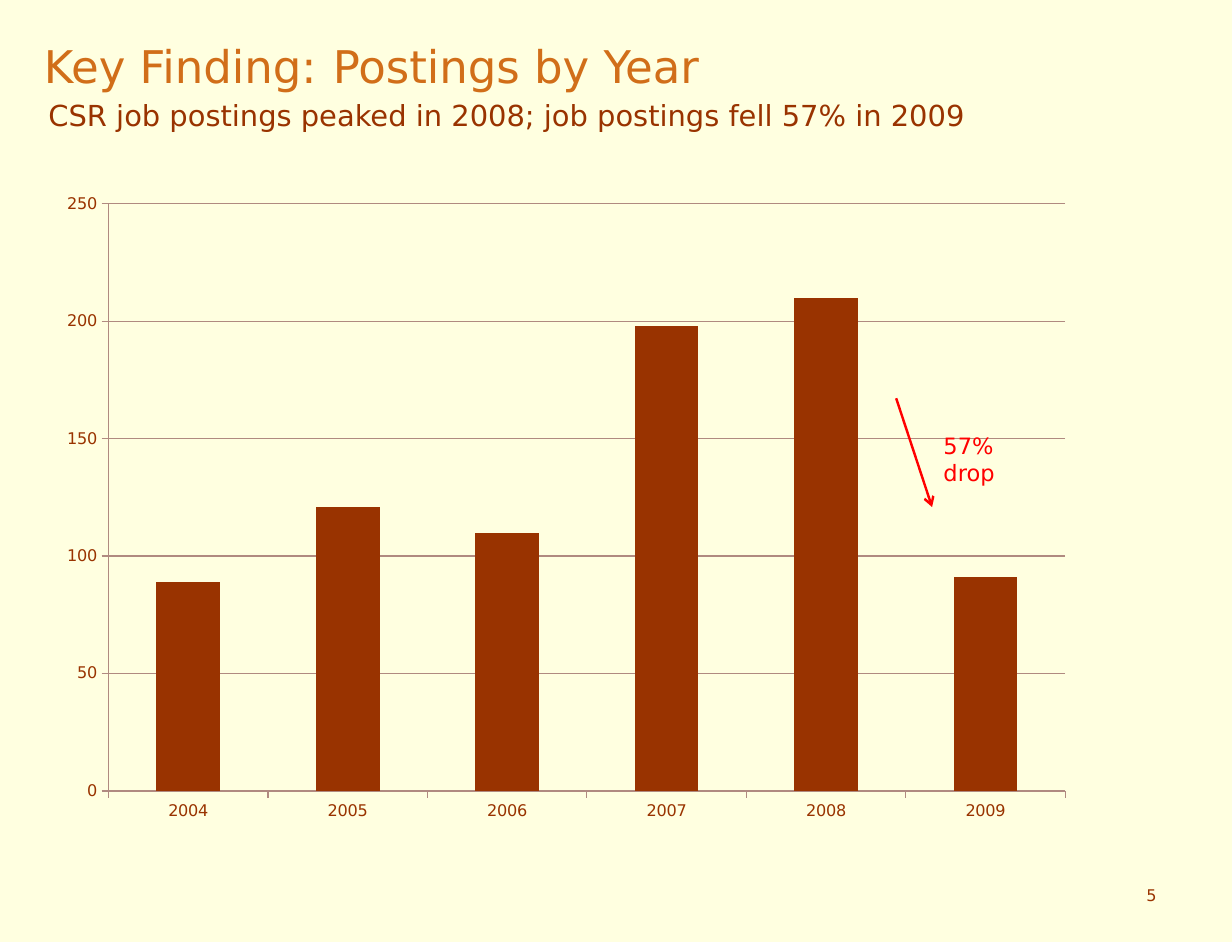
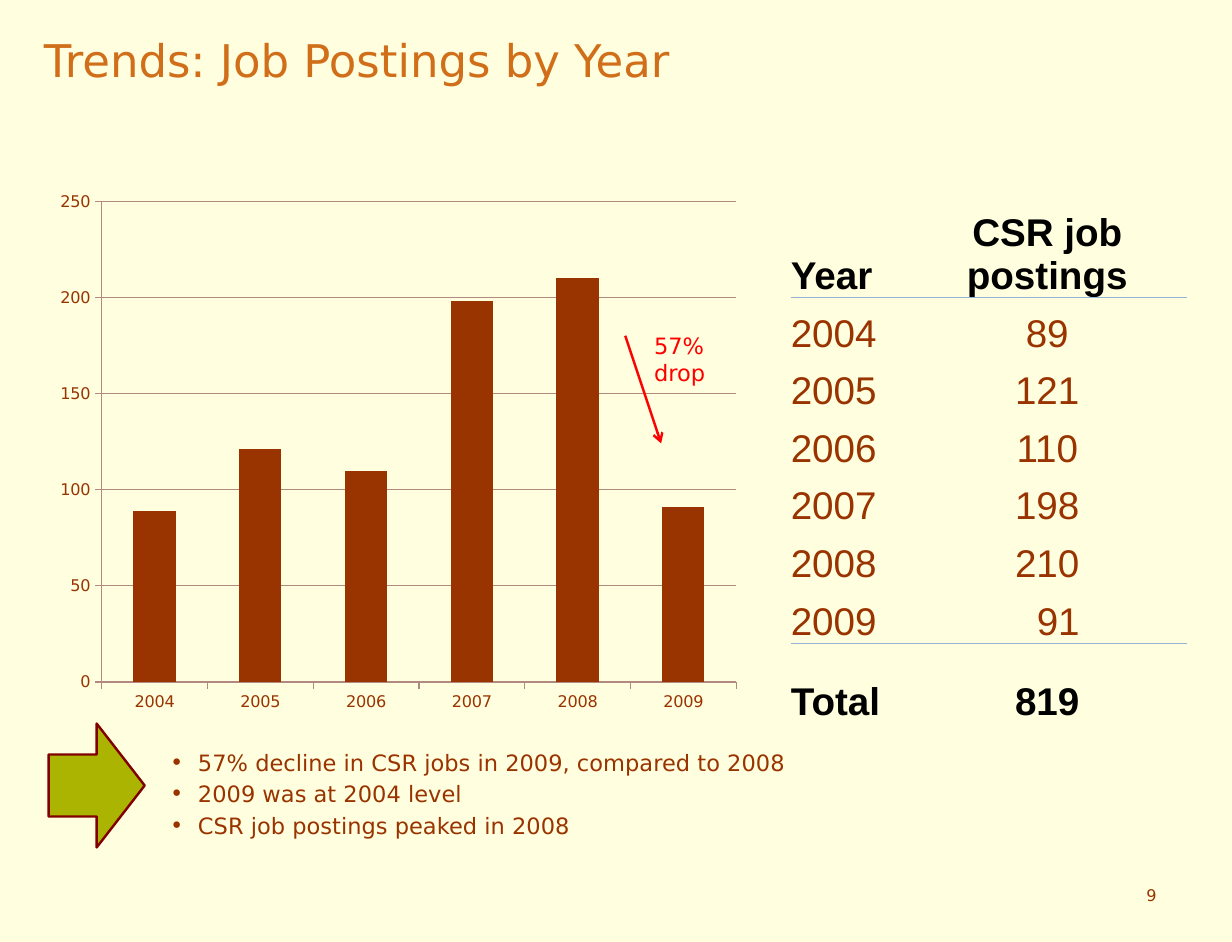
from lxml.etree import SubElement
from pptx import Presentation
from pptx.chart.data import CategoryChartData
from pptx.dml.color import RGBColor
from pptx.enum.chart import XL_CHART_TYPE, XL_TICK_MARK
from pptx.enum.shapes import MSO_CONNECTOR, MSO_SHAPE
from pptx.enum.text import MSO_ANCHOR, PP_ALIGN
from pptx.oxml import parse_xml
from pptx.oxml.ns import nsdecls, qn
from pptx.util import Inches, Pt

YEARS = ["2004", "2005", "2006", "2007", "2008", "2009"]
POSTINGS = [89, 121, 110, 198, 210, 91]


class Deck:
    """Builds slides that share one style."""

    COLORS = {
        "paper": "FFFFE0", "title": "D16E19", "text": "993300", "alert": "FF0000",
        "axis": "B08A80", "arrow": "ABB400", "outline": "800000",
        "strong": "000000", "rule": "95B3D7",
    }
    FONT = "DejaVu Sans"
    TABLE_FONT = "Arial"
    NO_GRID = "{2D5ABB26-0587-4C30-8999-92F81FD0307C}"

    def __init__(self):
        self.prs = Presentation()
        self.prs.slide_width, self.prs.slide_height = Inches(10.64), Inches(8.137)
        self.paint(self.prs.slide_master.background.fill, "paper")
        self.s = None

    def color(self, name):
        return RGBColor.from_string(self.COLORS[name])

    def paint(self, fill, name):
        fill.solid()
        fill.fore_color.rgb = self.color(name)

    def stroke(self, line, name, width):
        self.paint(line.fill, name)
        line.width = Pt(width)

    def style(self, font, size, color="text", **values):
        for key, value in {"name": self.FONT, "size": Pt(size), **values}.items():
            setattr(font, key, value)
        font.color.rgb = self.color(color)

    def text(self, box, runs, color="text", insets=(0.1, 0.05, 0.1, 0.05), **values):
        tf = self.s.shapes.add_textbox(*map(Inches, box)).text_frame
        sides = ("margin_left", "margin_top", "margin_right", "margin_bottom")
        frame = dict(zip(sides, map(Inches, insets)))
        for key, value in {"word_wrap": True, **frame, **values}.items():
            setattr(tf, key, value)
        for text, size in runs:
            r = tf.paragraphs[0].add_run()
            r.text = text
            self.style(r.font, size, color)
        return tf

    def slide(self, title, number):
        self.s = self.prs.slides.add_slide(self.prs.slide_layouts[6])
        self.text((0.38, 0.28, 6.7, 0.55), title, "title", (0, 0, 0, 0))
        self.text((9.9, 7.55, 0.33, 0.36), [(str(number), 10)],
                  insets=(0, 0.05, 0, 0.05), vertical_anchor=MSO_ANCHOR.MIDDLE)

    def chart(self, width, height):
        data = CategoryChartData()
        data.categories = YEARS
        data.add_series("Series 1", POSTINGS)
        box = map(Inches, (0.4, 1.57, width, height))
        chart = self.s.shapes.add_chart(XL_CHART_TYPE.COLUMN_STACKED, *box, data).chart
        chart.has_legend = chart.has_title = False
        self.style(chart.font, 10)
        plot = chart.plots[0]
        for key, value in {"gap_width": 150, "overlap": 100, "vary_by_categories": False}.items():
            setattr(plot, key, value)
        self.paint(plot.series[0].format.fill, "text")
        for axis in (chart.category_axis, chart.value_axis):
            axis.major_tick_mark = XL_TICK_MARK.OUTSIDE
            axis.minor_tick_mark = XL_TICK_MARK.NONE
            self.stroke(axis.format.line, "axis", 0.75)
        for key, value in {"minimum_scale": 0, "maximum_scale": 250, "major_unit": 50}.items():
            setattr(chart.value_axis, key, value)
        self.stroke(chart.value_axis.major_gridlines.format.line, "axis", 0.75)

    def drop(self, label, start, end):
        self.text((*label, 1.02, 0.57), [("57% drop", 14)], "alert")
        line = self.s.shapes.add_connector(MSO_CONNECTOR.STRAIGHT, *map(Inches, start + end))
        self.stroke(line.line, "alert", 1.5)
        SubElement(line.line._get_or_add_ln(), qn("a:tailEnd"), type="arrow")
        SubElement(line._element.spPr, qn("a:effectLst"))

    def bullets(self, box, items):
        tf = self.text(box, [], insets=(0.11, 0.05, 0.11, 0.05))
        for i, item in enumerate(items):
            p = tf.add_paragraph() if i else tf.paragraphs[0]
            if i:
                p.space_before = Pt(2.8)
            pPr = p._p.get_or_add_pPr()
            pPr.set("marL", str(Inches(0.24)))
            pPr.set("indent", str(-Inches(0.24)))
            SubElement(pPr, qn("a:buFont"), typeface=self.FONT)
            SubElement(pPr, qn("a:buChar"), char="•")
            r = p.add_run()
            r.text = item
            self.style(r.font, 14)

    def block_arrow(self, box):
        arrow = self.s.shapes.add_shape(MSO_SHAPE.DOWN_ARROW, *map(Inches, box))
        arrow.rotation = 270
        arrow.shadow.inherit = False
        self.paint(arrow.fill, "arrow")
        self.stroke(arrow.line, "outline", 1.5)

    def border(self, cell, side, shown):
        fill = (f'<a:solidFill><a:srgbClr val="{self.COLORS["rule"]}"/></a:solidFill>'
                if shown else "<a:noFill/>")
        cell._tc.get_or_add_tcPr().insert(0, parse_xml(
            f'<a:{side} {nsdecls("a")} w="{Pt(0.5)}">{fill}</a:{side}>'))

    def table(self, box, widths, heights, rows):
        frame = self.s.shapes.add_table(len(rows), len(widths), *map(Inches, box))
        table = frame.table
        table.first_row = table.horz_banding = False
        next(frame._element.iter(qn("a:tableStyleId"))).text = self.NO_GRID
        for column, width in zip(table.columns, widths):
            column.width = Inches(width)
        last = len(rows) - 1
        layout = {"margin_left": 0, "margin_top": 0, "margin_right": 0,
                  "margin_bottom": 0, "vertical_anchor": MSO_ANCHOR.BOTTOM}
        for i, row in enumerate(rows):
            table.rows[i].height = Inches(heights[i])
            strong = i in (0, last)
            for j, value in enumerate(row):
                cell = table.cell(i, j)
                for key, setting in layout.items():
                    setattr(cell, key, setting)
                cell.fill.background()
                self.border(cell, "lnB", i in (0, last - 1))
                self.border(cell, "lnT", i in (1, last))
                p = cell.text_frame.paragraphs[0]
                p.alignment = PP_ALIGN.CENTER if j else PP_ALIGN.LEFT
                r = p.add_run()
                r.text = str(value)
                self.style(r.font, 24, "strong" if strong else "text",
                           name=self.TABLE_FONT, bold=strong)
        return table


def main():
    deck = Deck()

    deck.slide([("Key Finding:", 28), (" ", 32), ("Postings by Year", 28)], 5)
    deck.chart(8.98, 5.63)
    deck.drop((8.05, 3.68), (7.74, 3.44), (8.05, 4.38))
    deck.text((0.32, 0.79, 9.77, 0.4),
              [("CSR job postings peaked in 2008; job postings fell 57% in 2009", 18)])

    deck.slide([("Trends: Job Postings by Year", 28)], 9)
    deck.chart(6.08, 4.67)
    deck.bullets((1.36, 6.42, 7.55, 0.9), [
        "57% decline in CSR jobs in 2009, compared to 2008",
        "2009 was at 2004 level",
        "CSR job postings peaked in 2008",
    ])
    deck.block_arrow((0.3, 6.37, 1.07, 0.83))
    rows = [("Year", "CSR job postings"), *zip(YEARS, POSTINGS), ("Total", sum(POSTINGS))]
    height, head, total = 4.67, 0.99, 0.69
    year = (height - head - total) / len(YEARS)
    table = deck.table((6.83, 1.58, 3.42, height), (1.01, 2.41),
                       [head] + [year] * len(YEARS) + [total], rows)
    table.cell(len(YEARS), 1).margin_left = Inches(0.19)
    deck.drop((5.55, 2.82), (5.4, 2.9), (5.71, 3.83))

    deck.prs.save("out.pptx")


if __name__ == "__main__":
    main()
